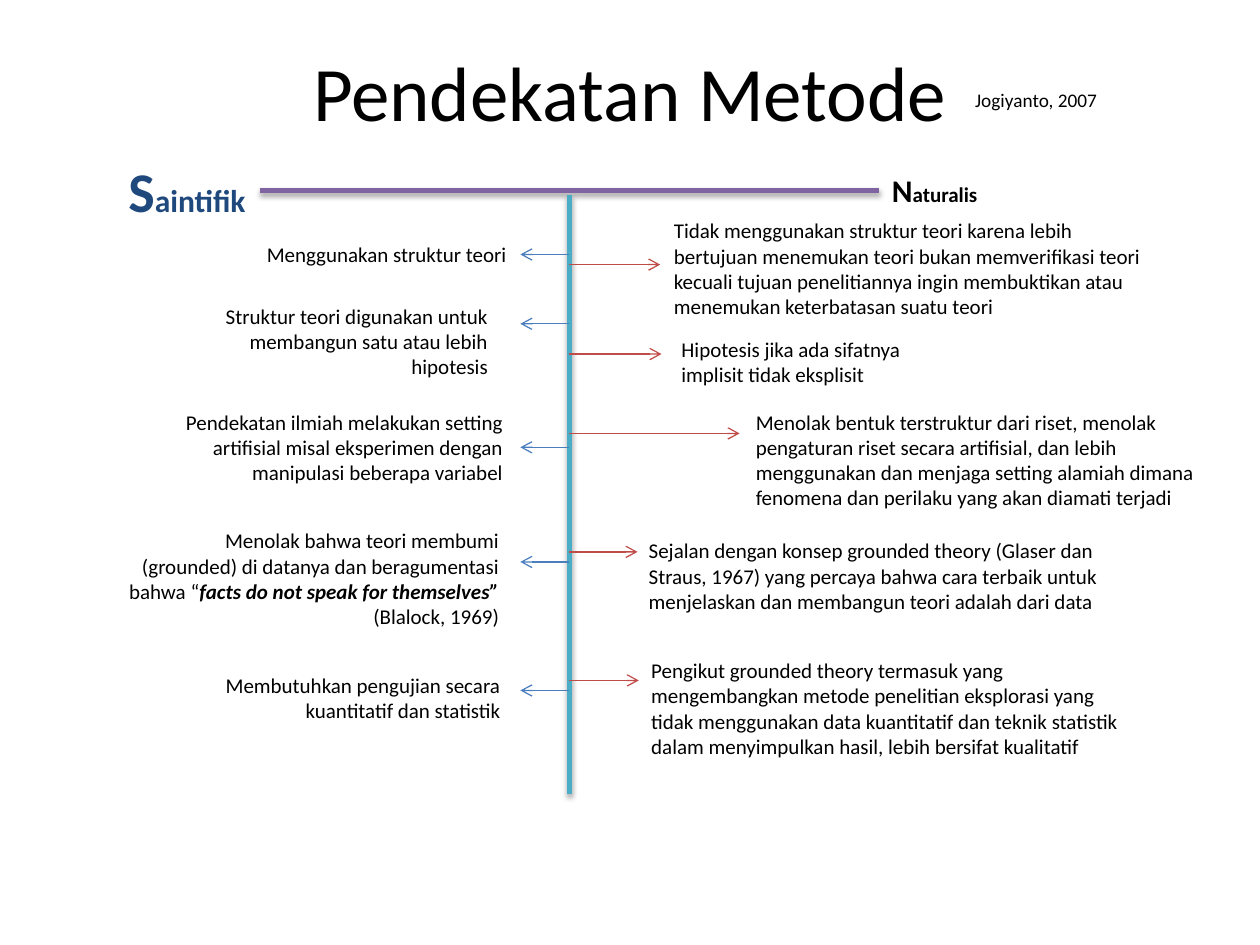
from lxml.etree import SubElement
from pptx import Presentation
from pptx.dml.color import RGBColor
from pptx.enum.shapes import MSO_CONNECTOR
from pptx.enum.text import MSO_ANCHOR, PP_ALIGN
from pptx.oxml.ns import qn
from pptx.util import Inches, Pt

FONT = "Calibri"
COLORS = {"text": "000000", "scientific": "1F497D", "bar": "8064A2",
          "trunk": "4BACC6", "left": "4B7EBC", "right": "BF4C48"}
TRUNK_X = 4.52
LEFT_TIP = 4.13

TITLE = "Pendekatan Metode"
# Text, left, top, width, height, sizes and bold of the runs, colour
LABELS = [
    ([("S", 32, True), ("aintifik", 18, True)], (0.92, 1.19, 1.14, 0.64), "scientific"),
    ([("N", 18, True), ("aturalis", 12, True)], (6.98, 1.31, 0.89, 0.4), "text"),
    ([("Jogiyanto, 2007", 11, False)], (7.64, 0.65, 1.18, 0.29), "text"),
]
# Runs (bold italic ones flagged True), box, arrow height
SCIENTIFIC = [
    ([("Menggunakan struktur teori", False)], (1.84, 1.87, 2.28, 0.3), 2.02),
    ([("Struktur teori digunakan untuk membangun satu atau lebih hipotesis", False)],
     (1.69, 2.36, 2.28, 0.71), 2.57),
    ([("Pendekatan ilmiah melakukan setting artifisial misal eksperimen dengan "
       "manipulasi beberapa variabel", False)], (0.92, 3.2, 3.17, 0.71), 3.55),
    ([("Menolak bahwa teori membumi (grounded) di datanya dan beragumentasi bahwa “", False),
      ("facts do not speak for themselves” ", True), ("(Blalock, 1969)", False)],
     (0.92, 4.14, 3.14, 0.91), 4.46),
    ([("Membutuhkan pengujian secara kuantitatif dan statistik", False)],
     (1, 5.29, 3.07, 0.5), 5.48),
]
# Text, box, arrow height, arrow tip
NATURALIST = [
    ("Tidak menggunakan struktur teori karena lebih bertujuan menemukan teori bukan "
     "memverifikasi teori kecuali tujuan penelitiannya ingin membuktikan atau "
     "menemukan keterbatasan suatu teori", (5.25, 1.68, 3.92, 0.91), 2.1, 5.24),
    ("Hipotesis jika ada sifatnya implisit tidak eksplisit",
     (5.31, 2.62, 2.28, 0.5), 2.81, 5.25),
    ("Menolak bentuk terstruktur dari riset, menolak pengaturan riset secara "
     "artifisial, dan lebih menggunakan dan menjaga setting alamiah dimana fenomena "
     "dan perilaku yang akan diamati terjadi", (5.9, 3.2, 3.92, 0.91), 3.44, 5.87),
    ("Sejalan dengan konsep grounded theory (Glaser dan Straus, 1967) yang percaya "
     "bahwa cara terbaik untuk menjelaskan dan membangun teori adalah dari data",
     (5.05, 4.22, 3.92, 0.71), 4.38, 5.06),
    ("Pengikut grounded theory termasuk yang mengembangkan metode penelitian "
     "eksplorasi yang tidak menggunakan data kuantitatif dan teknik statistik dalam "
     "menyimpulkan hasil, lebih bersifat kualitatif", (5.07, 5.17, 3.92, 0.91), 5.4, 5.07),
]


def style(run, size, bold=False, italic=False, color="text"):
    run.font.name = FONT
    run.font.size = Pt(size)
    run.font.bold = bold
    run.font.italic = italic
    run.font.color.rgb = RGBColor.from_string(COLORS[color])


def add_text(slide, runs, box, align=PP_ALIGN.LEFT, color="text", wrap=True):
    frame = slide.shapes.add_textbox(*map(Inches, box)).text_frame
    frame.word_wrap = wrap
    paragraph = frame.paragraphs[0]
    paragraph.alignment = align
    for text, size, bold, italic in runs:
        run = paragraph.add_run()
        run.text = text
        style(run, size, bold, italic, color)


def add_line(slide, start, end, color, width):
    line = slide.shapes.add_connector(MSO_CONNECTOR.STRAIGHT, *map(Inches, start + end))
    line.line.color.rgb = RGBColor.from_string(COLORS[color])
    line.line.width = Pt(width)
    effects = SubElement(line._element.spPr, qn("a:effectLst"))
    return line, effects


def add_beam(slide, start, end, color):
    _, effects = add_line(slide, start, end, color, 3)
    shadow = SubElement(effects, qn("a:outerShdw"), blurRad=str(Pt(3.1)),
                        dist=str(Pt(1.8)), dir="5400000", rotWithShape="0")
    black = SubElement(shadow, qn("a:srgbClr"), val="000000")
    SubElement(black, qn("a:alpha"), val="35000")


def add_arrow(slide, y, tip, color):
    arrow, _ = add_line(slide, (TRUNK_X, y), (tip, y), color, 0.75)
    SubElement(arrow.line._get_or_add_ln(), qn("a:tailEnd"), type="arrow")


def main():
    prs = Presentation()
    prs.slide_width, prs.slide_height = Inches(10), Inches(7.5)
    slide = prs.slides.add_slide(prs.slide_layouts[5])

    # Title
    title = slide.shapes.title
    title.left, title.top, title.width, title.height = map(Inches, (0.5, 0.3, 9, 1.25))
    title.text_frame.text = TITLE
    title.text_frame.vertical_anchor = MSO_ANCHOR.TOP
    title.text_frame.paragraphs[0].alignment = PP_ALIGN.CENTER
    style(title.text_frame.paragraphs[0].runs[0], 44)

    # Headings and source
    for runs, box, color in LABELS:
        add_text(slide, [(*run, False) for run in runs], box, color=color, wrap=False)

    # Crossbar and trunk
    add_beam(slide, (2.06, 1.51), (6.98, 1.51), "bar")
    add_beam(slide, (TRUNK_X, 1.55), (TRUNK_X, 6.3), "trunk")

    # Branches
    for runs, box, y in SCIENTIFIC:
        add_arrow(slide, y, LEFT_TIP, "left")
        add_text(slide, [(text, 12, strong, strong) for text, strong in runs], box,
                 PP_ALIGN.RIGHT)
    for text, box, y, tip in NATURALIST:
        add_arrow(slide, y, tip, "right")
        add_text(slide, [(text, 12, False, False)], box)

    prs.save("out.pptx")


if __name__ == "__main__":
    main()
